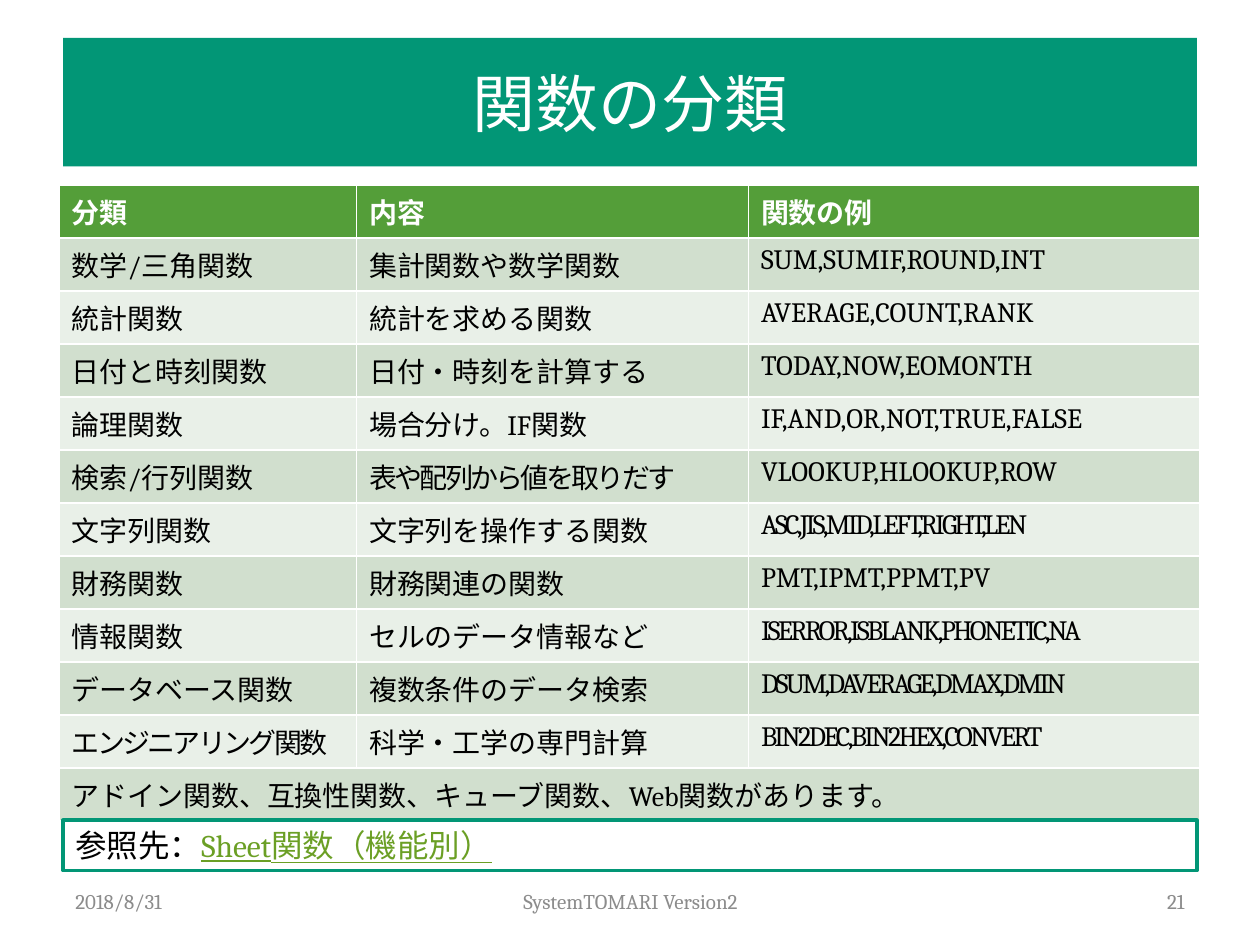
from pptx import Presentation
from pptx import util as u
from pptx.dml import color
from pptx.enum import shapes, text

GREEN, TEAL, LINK = "549E39", "029676", "6B9F25"
BLACK, WHITE, GRAY = "000000", "FFFFFF", "8C8C8C"
BANDS = ("D1DFCE", "E9F0E8")
ALIGN = text.PP_ALIGN
TIGHT = -150

HEADER = ("分類", "内容", "関数の例")
ROWS = [
    ("数学/三角関数", "集計関数や数学関数", "SUM,SUMIF,ROUND,INT"),
    ("統計関数", "統計を求める関数", "AVERAGE,COUNT,RANK"),
    ("日付と時刻関数", "日付・時刻を計算する", "TODAY,NOW,EOMONTH"),
    ("論理関数", "場合分け。IF関数", "IF,AND,OR,NOT,TRUE,FALSE"),
    ("検索/行列関数", "表や配列から値を取りだす", "VLOOKUP,HLOOKUP,ROW"),
    ("文字列関数", "文字列を操作する関数", "ASC,JIS,MID,LEFT,RIGHT,LEN"),
    ("財務関数", "財務関連の関数", "PMT,IPMT,PPMT,PV"),
    ("情報関数", "セルのデータ情報など", "ISERROR,ISBLANK,PHONETIC,NA"),
    ("データベース関数", "複数条件のデータ検索", "DSUM,DAVERAGE,DMAX,DMIN"),
    ("エンジニアリング関数", "科学・工学の専門計算", "BIN2DEC,BIN2HEX,CONVERT"),
    ("アドイン関数、互換性関数、キューブ関数、Web関数があります。",),
]
TIGHT_CELLS = {(5, 1), (6, 2), (8, 2), (9, 2), (10, 0), (10, 2)}


def rgb(value):
    return color.RGBColor.from_string(value)


class SlideBuilder:
    font = "Cambria"

    def __init__(self, s):
        self.s = s

    def box(self, at):
        return [u.Inches(v) for v in at]

    def fill(self, target, value):
        target.fill.solid()
        target.fill.fore_color.rgb = rgb(value)

    def run(self, p, words, size, value, spacing=0, **formats):
        r = p.add_run()
        r.text = words
        for name, setting in {"name": self.font, "size": u.Pt(size), **formats}.items():
            setattr(r.font, name, setting)
        r.font.color.rgb = rgb(value)
        if spacing:
            r.font._element.set("spc", str(spacing))

    def title(self, words, at):
        sp = self.s.shapes.title
        sp.left, sp.top, sp.width, sp.height = self.box(at)
        self.fill(sp, TEAL)
        tf = sp.text_frame
        tf.vertical_anchor = text.MSO_ANCHOR.MIDDLE
        p = tf.paragraphs[0]
        p.alignment = ALIGN.CENTER
        self.run(p, words, 36, WHITE)

    def table(self, header, rows, at, widths):
        tbl = self.s.shapes.add_table(len(rows) + 1, len(header), *self.box(at)).table
        for column, width in zip(tbl.columns, widths):
            column.width = u.Inches(width)
        for i, row in enumerate([header, *rows]):
            for j, words in enumerate(row):
                cell = tbl.cell(i, j)
                if len(row) == 1:
                    cell.merge(tbl.cell(i, len(header) - 1))
                self.fill(cell, BANDS[(i - 1) % 2] if i else GREEN)
                self.run(cell.text_frame.paragraphs[0], words, 16,
                         BLACK if i else WHITE,
                         TIGHT if (i, j) in TIGHT_CELLS else 0, bold=i == 0)

    def footer(self, words, at, align):
        tf = self.s.shapes.add_textbox(*self.box(at)).text_frame
        tf.word_wrap = True
        tf.vertical_anchor = text.MSO_ANCHOR.MIDDLE
        p = tf.paragraphs[0]
        p.alignment = align
        self.run(p, words, 12, GRAY)

    def reference(self, label, link, at):
        sp = self.s.shapes.add_shape(shapes.MSO_SHAPE.RECTANGLE, *self.box(at))
        sp.shadow.inherit = False
        self.fill(sp, WHITE)
        sp.line.color.rgb = rgb(TEAL)
        sp.line.width = u.Pt(2)
        tf = sp.text_frame
        tf.vertical_anchor = text.MSO_ANCHOR.TOP
        tf.auto_size = text.MSO_AUTO_SIZE.SHAPE_TO_FIT_TEXT
        p = tf.paragraphs[0]
        p.alignment = ALIGN.LEFT
        self.run(p, label, 18, BLACK)
        self.run(p, link, 18, LINK, underline=True)


def main():
    prs = Presentation()
    prs.slide_width, prs.slide_height = u.Inches(10), u.Inches(7.5)
    b = SlideBuilder(prs.slides.add_slide(prs.slide_layouts[5]))
    b.title("関数の分類", (0.5, 0.3, 9, 1.02))
    b.table(HEADER, ROWS, (0.47, 1.47, 9.05, 4.87), (2.36, 3.11, 3.58))
    b.footer("2018/8/31", (0.5, 6.95, 2.33, 0.4), ALIGN.LEFT)
    b.footer("SystemTOMARI Version2", (3.42, 6.95, 3.17, 0.4), ALIGN.CENTER)
    b.footer("21", (7.17, 6.95, 2.33, 0.4), ALIGN.RIGHT)
    b.reference("参照先：", "Sheet関数（機能別）", (0.5, 6.51, 9, 0.4))
    prs.save("out.pptx")


if __name__ == "__main__":
    main()
